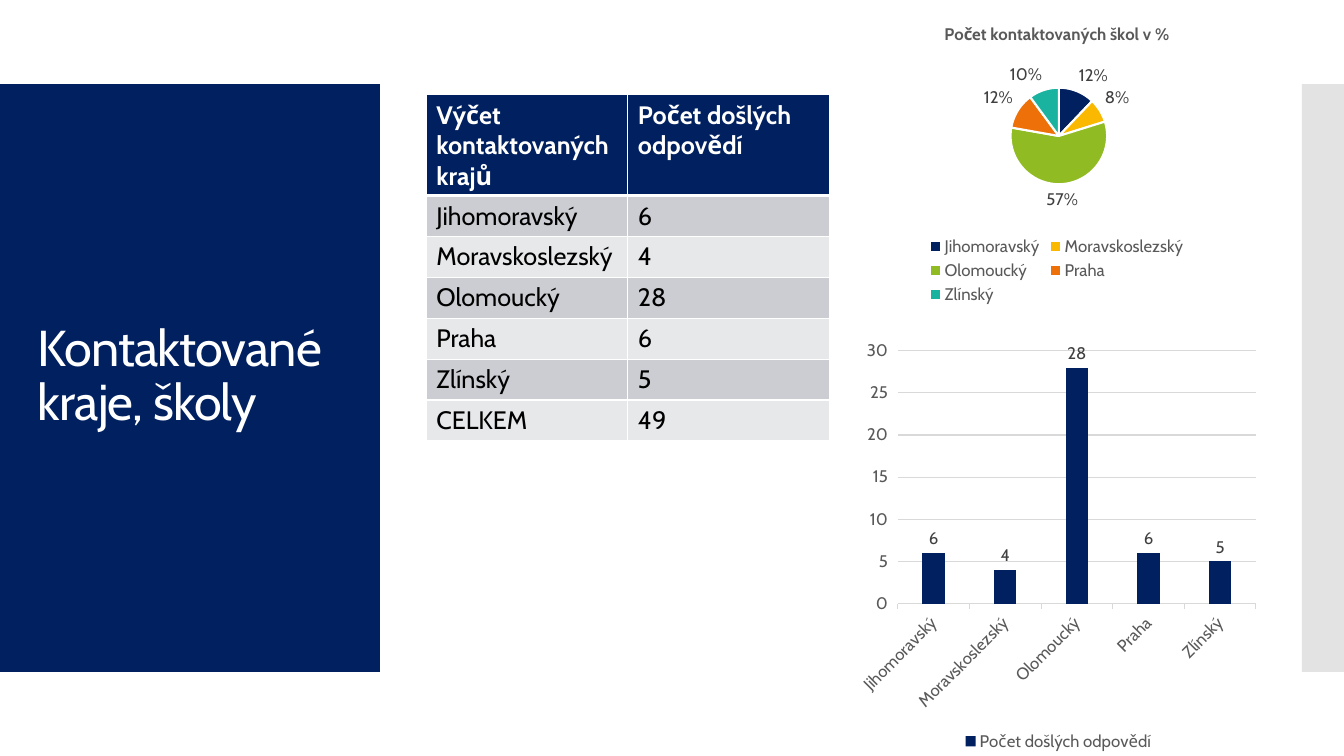
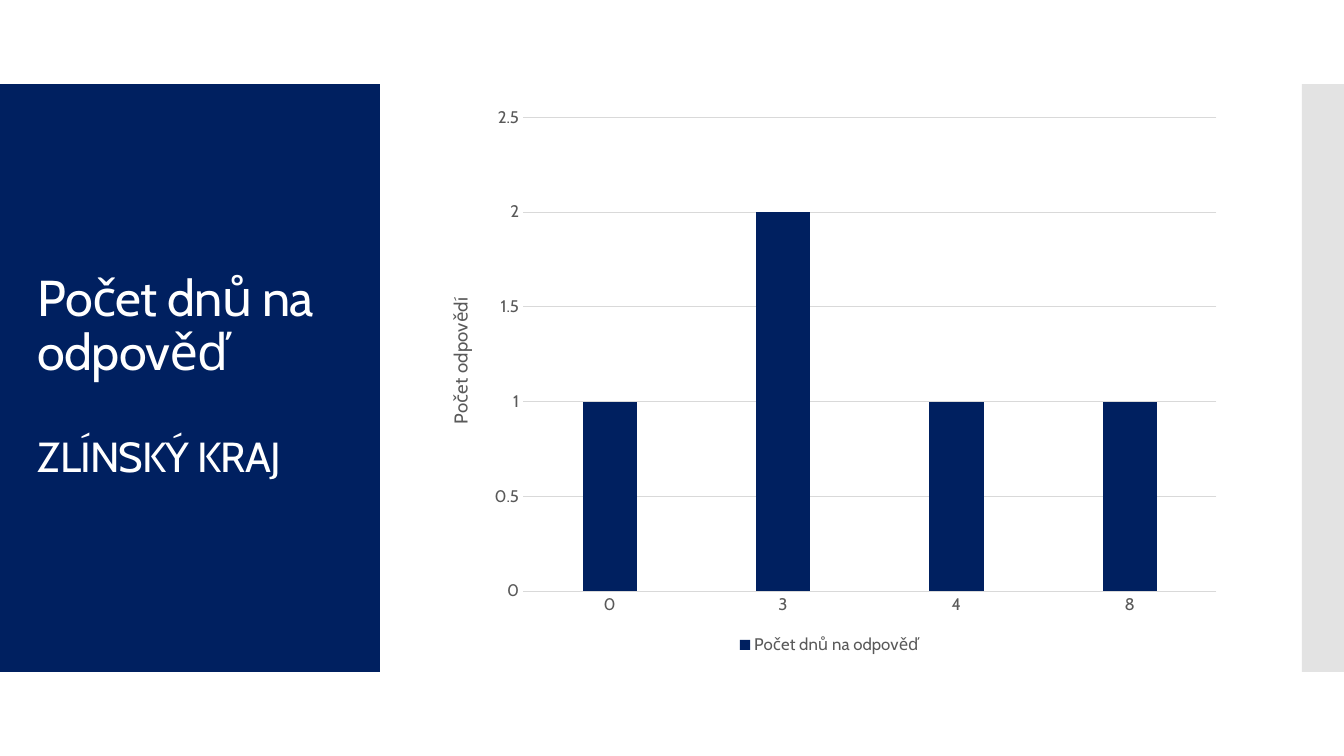
from lxml import etree
from pptx import Presentation
from pptx.chart.data import CategoryChartData
from pptx.dml.color import RGBColor
from pptx.enum.chart import XL_CHART_TYPE, XL_LABEL_POSITION, XL_LEGEND_POSITION, XL_TICK_MARK
from pptx.enum.shapes import MSO_SHAPE
from pptx.enum.text import MSO_ANCHOR
from pptx.oxml import parse_xml
from pptx.oxml.ns import nsdecls, qn
from pptx.util import Pt

COLUMN, PIE = XL_CHART_TYPE.COLUMN_CLUSTERED, XL_CHART_TYPE.PIE
BOTTOM = XL_LEGEND_POSITION.BOTTOM
OUTSIDE_END = XL_LABEL_POSITION.OUTSIDE_END
TICK_OUT, TICK_NONE = XL_TICK_MARK.OUTSIDE, XL_TICK_MARK.NONE
RECTANGLE = MSO_SHAPE.RECTANGLE
MIDDLE = MSO_ANCHOR.MIDDLE

FONT = "Cabin"
COLORS = {
    "navy": "002060", "band": "C8C8C8", "white": "FFFFFF", "black": "000000",
    "row_dark": "CCCDD2", "row_light": "E7E8EA", "grid": "D9D9D9",
    "axis": "595959", "label": "404040",
    "yellow": "FAB900", "green": "90BB23", "orange": "EE7008", "teal": "1AB39F",
}
PIE_COLORS = ["navy", "yellow", "green", "orange", "teal"]

REGIONS = ["Jihomoravský", "Moravskoslezský", "Olomoucký", "Praha", "Zlínský"]
REPLIES = [6, 4, 28, 6, 5]
SHARES = [12, 8, 57, 12, 10]
REPLIES_NAME = "Počet došlých odpovědí"
TABLE_ROWS = [
    ("Výčet kontaktovaných krajů", REPLIES_NAME),
    *zip(REGIONS, REPLIES),
    ("CELKEM", sum(REPLIES)),
]
REGIONS_TITLE = [("Kontaktované kraje, školy", 36)]
DAYS_TITLE = [("Počet dnů na odpověď", 36), ("ZLÍNSKÝ KRAJ", 30)]
REPLIES_CHART = {
    "box": (609, 238.5, 294, 301), "plot": (0.11, 0.04, 0.87, 0.6),
    "categories": REGIONS, "name": REPLIES_NAME, "values": REPLIES,
    "maximum": 30, "step": 5, "tick": TICK_OUT, "labels": True, "rotation": -45,
}
SHARES_CHART = {
    "box": (617, 6, 276, 214.5), "plot": (0.38, 0.26, 0.25, 0.33),
    "categories": REGIONS, "name": "Počet kontaktovaných škol v %", "values": SHARES,
}
DAYS_CHART = {
    "box": (304.5, 67.7, 576, 403), "plot": (0.12, 0.04, 0.86, 0.84),
    "categories": ["0", "3", "4", "8"], "name": "Počet dnů na odpověď",
    "values": [1, 2, 1, 1], "maximum": 2.5, "step": 0.5, "tick": TICK_NONE,
    "axis_title": "Počet odpovědí",
}


def color(name):
    return RGBColor.from_string(COLORS[name])


def points(*lengths):
    return [Pt(length) for length in lengths]


def paint(fill, name):
    fill.solid()
    fill.fore_color.rgb = color(name)


def style_font(font, size, name, bold=False):
    font.name = FONT
    font.size = Pt(size)
    font.bold = bold
    font.color.rgb = color(name)


def add_band(slide, left, width, name):
    shape = slide.shapes.add_shape(RECTANGLE, *points(left, 60, width, 420))
    shape.shadow.inherit = False
    paint(shape.fill, name)
    shape.line.fill.background()
    return shape


def add_base_slide(presentation, title):
    slide = presentation.slides.add_slide(presentation.slide_layouts[6])
    add_band(slide, 0, 271.3, "navy")
    side_band = add_band(slide, 930, 30, "band")
    band_color = side_band.fill._xPr.find(qn("a:solidFill"))[0]
    etree.SubElement(band_color, qn("a:alpha")).set("val", "50000")

    frame = slide.shapes.add_textbox(*points(20, 88.5, 232, 362)).text_frame
    frame.word_wrap = True
    frame.vertical_anchor = MIDDLE
    for index, (text, size) in enumerate(title):
        paragraph = frame.add_paragraph() if index else frame.paragraphs[0]
        paragraph.text = text
        paragraph.line_spacing = 0.9
        paragraph.space_before = Pt(39 if index else 0)
        style_font(paragraph.font, size, "white")
        paragraph.font._element.set("spc", "-60")
    return slide


def set_borders(cell, bottom):
    properties = cell._tc.get_or_add_tcPr()
    sides = [("lnL", 1), ("lnR", 1), ("lnT", 1), ("lnB", bottom)]
    for index, (side, width) in enumerate(sides):
        properties.insert(index, parse_xml(
            f'<a:{side} {nsdecls("a")} w="{Pt(width)}"><a:solidFill>'
            f'<a:srgbClr val="{COLORS["white"]}"/></a:solidFill></a:{side}>'))


def add_region_table(slide):
    table = slide.shapes.add_table(
        len(TABLE_ROWS), 2, *points(304.5, 67.7, 288, 247.2)).table
    for column in table.columns:
        column.width = Pt(144)
    for row_index, values in enumerate(TABLE_ROWS):
        header = row_index == 0
        table.rows[row_index].height = Pt(72 if header else 29.2)
        fill = "navy" if header else ("row_light", "row_dark")[row_index % 2]
        for column_index, value in enumerate(values):
            cell = table.cell(row_index, column_index)
            cell.text = str(value)
            paint(cell.fill, fill)
            style_font(cell.text_frame.paragraphs[0].font, 18,
                       "white" if header else "black", header)
            set_borders(cell, 3 if header else 1)


def set_plot_area(chart, fractions):
    plot_area = chart._chartSpace.chart.plotArea
    for layout in plot_area.findall(qn("c:layout")):
        plot_area.remove(layout)
    settings = [("layoutTarget", "inner"), ("xMode", "edge"), ("yMode", "edge"),
                *zip("xywh", fractions)]
    body = "".join(f'<c:{tag} val="{value}"/>' for tag, value in settings)
    plot_area.insert(0, parse_xml(
        f'<c:layout {nsdecls("c")}><c:manualLayout>{body}</c:manualLayout></c:layout>'))


def add_base_chart(slide, kind, spec):
    data = CategoryChartData()
    data.categories = spec["categories"]
    data.add_series(spec["name"], spec["values"])
    chart = slide.shapes.add_chart(kind, *points(*spec["box"]), data).chart
    style_font(chart.font, 10, "black")
    chart.has_title = False
    chart.has_legend = True
    chart.legend.position = BOTTOM
    chart.legend.include_in_layout = False
    style_font(chart.legend.font, 12, "axis")
    set_plot_area(chart, spec["plot"])
    return chart


def set_title(holder, text, size, bold):
    frame = holder.text_frame
    frame.text = text
    style_font(frame.paragraphs[0].font, size, "axis", bold)


def add_labels(plot, number_format):
    plot.has_data_labels = True
    labels = plot.data_labels
    labels.show_value = True
    labels.show_percentage = False
    labels.number_format = number_format
    labels.number_format_is_linked = False
    labels.position = OUTSIDE_END
    style_font(labels.font, 12, "label")


def add_column_chart(slide, spec):
    chart = add_base_chart(slide, COLUMN, spec)
    plot = chart.plots[0]
    plot.vary_by_categories = False
    plot.gap_width = 219
    plot.overlap = -27
    paint(plot.series[0].format.fill, "navy")
    if spec.get("labels"):
        add_labels(plot, "General")

    category_axis, value_axis = chart.category_axis, chart.value_axis
    for axis in (category_axis, value_axis):
        axis.major_tick_mark = spec["tick"]
        axis.minor_tick_mark = TICK_NONE
        style_font(axis.tick_labels.font, 12, "axis")
    value_axis.minimum_scale = 0
    value_axis.maximum_scale = spec["maximum"]
    value_axis.major_unit = spec["step"]
    value_axis.format.line.fill.background()
    for line in (category_axis.format.line, value_axis.major_gridlines.format.line):
        paint(line.fill, "grid")
        line.width = Pt(0.75)
    if "rotation" in spec:
        body = category_axis._element.find(qn("c:txPr")).find(qn("a:bodyPr"))
        body.set("rot", str(spec["rotation"] * 60000))
    if "axis_title" in spec:
        set_title(value_axis.axis_title, spec["axis_title"], 13.3, False)


def add_pie_chart(slide, spec):
    chart = add_base_chart(slide, PIE, spec)
    chart.has_title = True
    set_title(chart.chart_title, spec["name"], 12, True)
    plot = chart.plots[0]
    plot.vary_by_categories = True
    add_labels(plot, '0"%"')
    for index, name in enumerate(PIE_COLORS):
        slice_format = plot.series[0].points[index].format
        paint(slice_format.fill, name)
        paint(slice_format.line.fill, "white")
        slice_format.line.width = Pt(1.5)


def main():
    presentation = Presentation()
    presentation.slide_width, presentation.slide_height = points(960, 540)

    regions_slide = add_base_slide(presentation, REGIONS_TITLE)
    add_region_table(regions_slide)
    add_column_chart(regions_slide, REPLIES_CHART)
    add_pie_chart(regions_slide, SHARES_CHART)

    days_slide = add_base_slide(presentation, DAYS_TITLE)
    add_column_chart(days_slide, DAYS_CHART)

    presentation.save("out.pptx")


if __name__ == "__main__":
    main()
